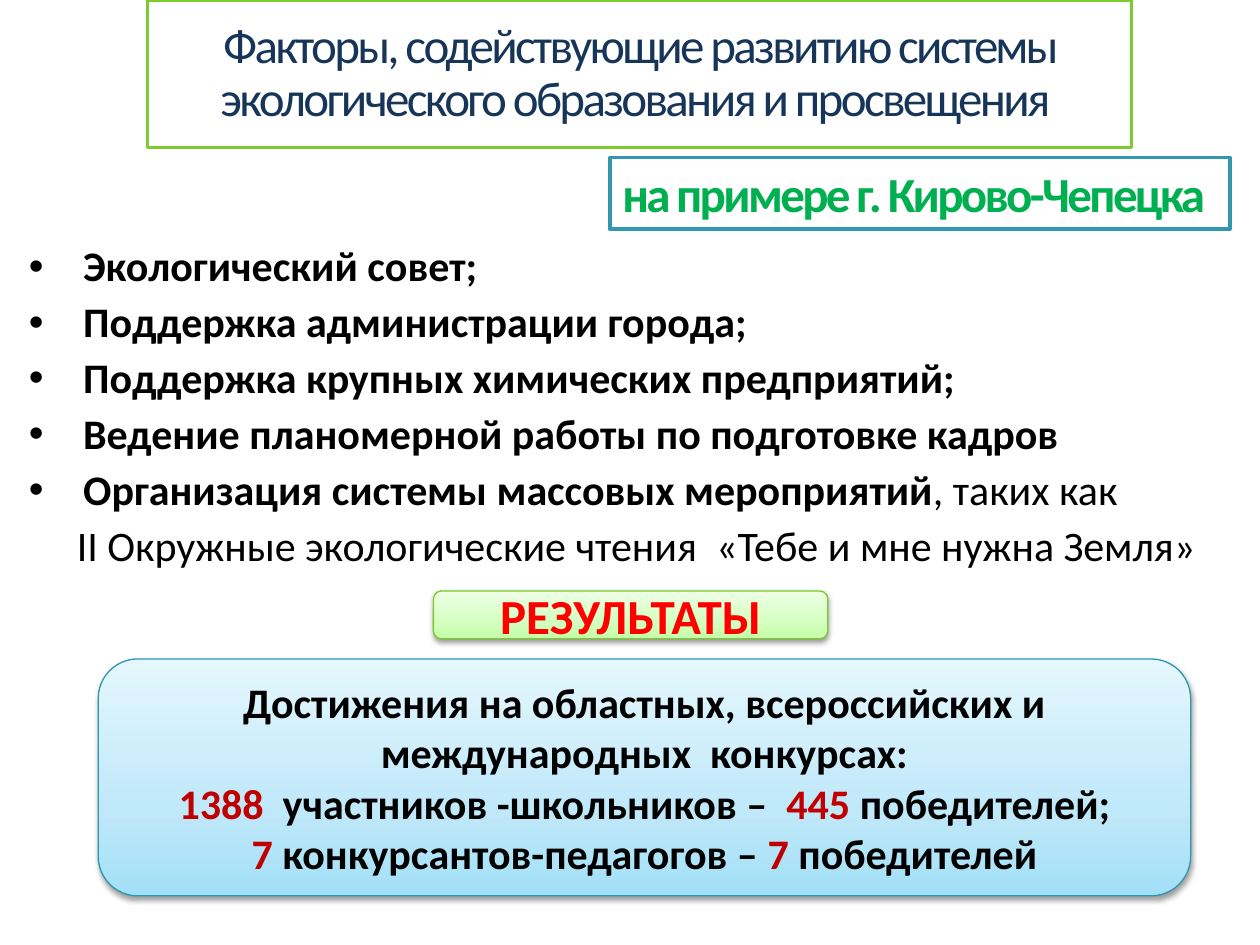
from dataclasses import dataclass
from typing import Optional

from pptx import Presentation
from pptx.dml.color import RGBColor
from pptx.enum.shapes import MSO_SHAPE
from pptx.enum.text import MSO_ANCHOR, PP_ALIGN
from pptx.oxml import parse_xml
from pptx.oxml.ns import nsdecls, qn
from pptx.util import Inches, Pt

FONT = "Calibri"
BLACK, WHITE, RED, DARK_RED = "000000", "FFFFFF", "FF0000", "C00000"


@dataclass(frozen=True)
class Span:
    text: str
    color: str = BLACK
    bold: bool = True


@dataclass(frozen=True)
class Panel:
    left: float
    top: float
    width: float
    height: float
    line: str
    line_width: float = 2
    shape: MSO_SHAPE = MSO_SHAPE.RECTANGLE
    gradient: Optional[tuple[str, str, str]] = None
    anchor: MSO_ANCHOR = MSO_ANCHOR.MIDDLE
    inset: tuple[float, float] = (0.1, 0.05)


def rgb(value: str) -> RGBColor:
    return RGBColor.from_string(value)


def prepare_frame(box, anchor: MSO_ANCHOR, inset: tuple[float, float]) -> None:
    frame = box.text_frame
    frame.word_wrap = True
    frame.vertical_anchor = anchor
    frame.margin_left = frame.margin_right = Inches(inset[0])
    frame.margin_top = frame.margin_bottom = Inches(inset[1])


def add_gradient(box, colors: tuple[str, str, str]) -> None:
    """Fill the box from bottom to top with three colours."""
    box.fill.gradient()
    box.fill.gradient_angle = 90
    stops = "".join(
        f'<a:gs pos="{position}"><a:srgbClr val="{color}"/></a:gs>'
        for position, color in zip((0, 35000, 100000), colors)
    )
    gradient = box._element.spPr.find(qn("a:gradFill"))
    gradient.replace(
        gradient.find(qn("a:gsLst")),
        parse_xml(f'<a:gsLst {nsdecls("a")}>{stops}</a:gsLst>'),
    )


def add_shadow(box) -> None:
    box._element.spPr.find(qn("a:effectLst")).append(parse_xml(
        f'<a:outerShdw {nsdecls("a")} blurRad="{Pt(3.1)}" dist="{Pt(1.6)}" '
        'dir="5400000" rotWithShape="0"><a:srgbClr val="000000">'
        '<a:alpha val="38000"/></a:srgbClr></a:outerShdw>'
    ))


def add_panel(page, panel: Panel):
    box = page.shapes.add_shape(
        panel.shape, Inches(panel.left), Inches(panel.top),
        Inches(panel.width), Inches(panel.height),
    )
    box.shadow.inherit = False
    if panel.gradient:
        add_gradient(box, panel.gradient)
        add_shadow(box)
    else:
        box.fill.solid()
        box.fill.fore_color.rgb = rgb(WHITE)
    box.line.color.rgb = rgb(panel.line)
    box.line.width = Pt(panel.line_width)
    prepare_frame(box, panel.anchor, panel.inset)
    return box


def set_indent(para, margin: float, bullet: bool) -> None:
    properties = para._p.get_or_add_pPr()
    properties.set("marL", str(Inches(margin)))
    properties.set("indent", str(-Inches(margin) if bullet else 0))
    if bullet:
        for markup in (
            f'<a:buClr {nsdecls("a")}><a:srgbClr val="{BLACK}"/></a:buClr>',
            f'<a:buFont {nsdecls("a")} typeface="Arial"/>',
            f'<a:buChar {nsdecls("a")} char="•"/>',
        ):
            properties.append(parse_xml(markup))


def write(box, paragraphs: list[list[Span]], *, size: float = 24,
          align: PP_ALIGN = PP_ALIGN.CENTER, line_spacing: float = 1.0,
          space_after: float = 0, tracking: float = 0,
          margins: Optional[list[tuple[float, bool]]] = None) -> None:
    """Write paragraphs of spans; margins holds (indent, bulleted) pairs."""
    frame = box.text_frame
    for index, spans in enumerate(paragraphs):
        para = frame.add_paragraph() if index else frame.paragraphs[0]
        if margins:
            set_indent(para, *margins[index])
        para.alignment = align
        para.line_spacing = line_spacing
        para.space_after = Pt(space_after)
        for span in spans:
            run = para.add_run()
            run.text = span.text
            run.font.name = FONT
            run.font.size = Pt(size)
            run.font.bold = span.bold
            run.font.color.rgb = rgb(span.color)
            if tracking:
                run.font._element.set("spc", str(int(tracking * 100)))


def main() -> None:
    deck = Presentation()
    deck.slide_width, deck.slide_height = Inches(10), Inches(7.5)
    page = deck.slides.add_slide(deck.slide_layouts[6])

    # Title
    title = add_panel(page, Panel(1.17, 0, 7.81, 1.17, "7DCC2E", inset=(0, 0)))
    write(title, [[Span(
        "Факторы, содействующие развитию системы экологического образования "
        "и просвещения ", "163558", False)]],
        size=28, line_spacing=0.9, tracking=-1.5)

    # Supporting factors
    factors = [
        [Span("Экологический совет;")],
        [Span("Поддержка администрации города;")],
        [Span("Поддержка крупных химических предприятий;")],
        [Span("Ведение планомерной работы по подготовке кадров")],
        [Span("Организация системы массовых мероприятий"),
         Span(", таких как", bold=False)],
    ]
    example = [Span("II Окружные экологические чтения  «Тебе и мне нужна Земля»",
                    bold=False)]
    factor_box = page.shapes.add_textbox(
        Inches(0.23), Inches(1.95), Inches(9.45), Inches(2.6))
    prepare_frame(factor_box, MSO_ANCHOR.TOP, (0, 0))
    write(factor_box, [*factors, example], align=PP_ALIGN.LEFT,
          line_spacing=0.9, space_after=6,
          margins=[(0.43, True)] * len(factors) + [(0.38, False)])

    # Achievements
    achievements = add_panel(page, Panel(
        0.78, 5.23, 8.67, 1.88, "3096AD", 0.75, MSO_SHAPE.ROUNDED_RECTANGLE,
        ("A2E0F8", "BFE8F9", "E5F7FE")))
    write(achievements, [
        [Span("Достижения на областных, всероссийских и "
              "международных  конкурсах:")],
        [Span("1388 ", DARK_RED), Span(" участников -школьников –  "),
         Span("445", DARK_RED), Span(" победителей;")],
        [Span("7", DARK_RED), Span(" конкурсантов-педагогов – "),
         Span("7", DARK_RED), Span(" победителей")],
    ])

    # Results heading
    results = add_panel(page, Panel(
        3.44, 4.69, 3.13, 0.38, "7ACB29", 0.75, MSO_SHAPE.ROUNDED_RECTANGLE,
        ("C4FFA7", "D4FFC0", "EEFFE7")))
    write(results, [[Span("РЕЗУЛЬТАТЫ", RED)]], size=28)

    # Town subtitle
    subtitle = add_panel(page, Panel(
        4.84, 1.25, 4.92, 0.57, "3497AE", anchor=MSO_ANCHOR.TOP))
    write(subtitle, [[Span("на примере г. Кирово-Чепецка", "00B050")]],
          size=28, align=PP_ALIGN.LEFT, tracking=-1.5)

    deck.save("out.pptx")


if __name__ == "__main__":
    main()
